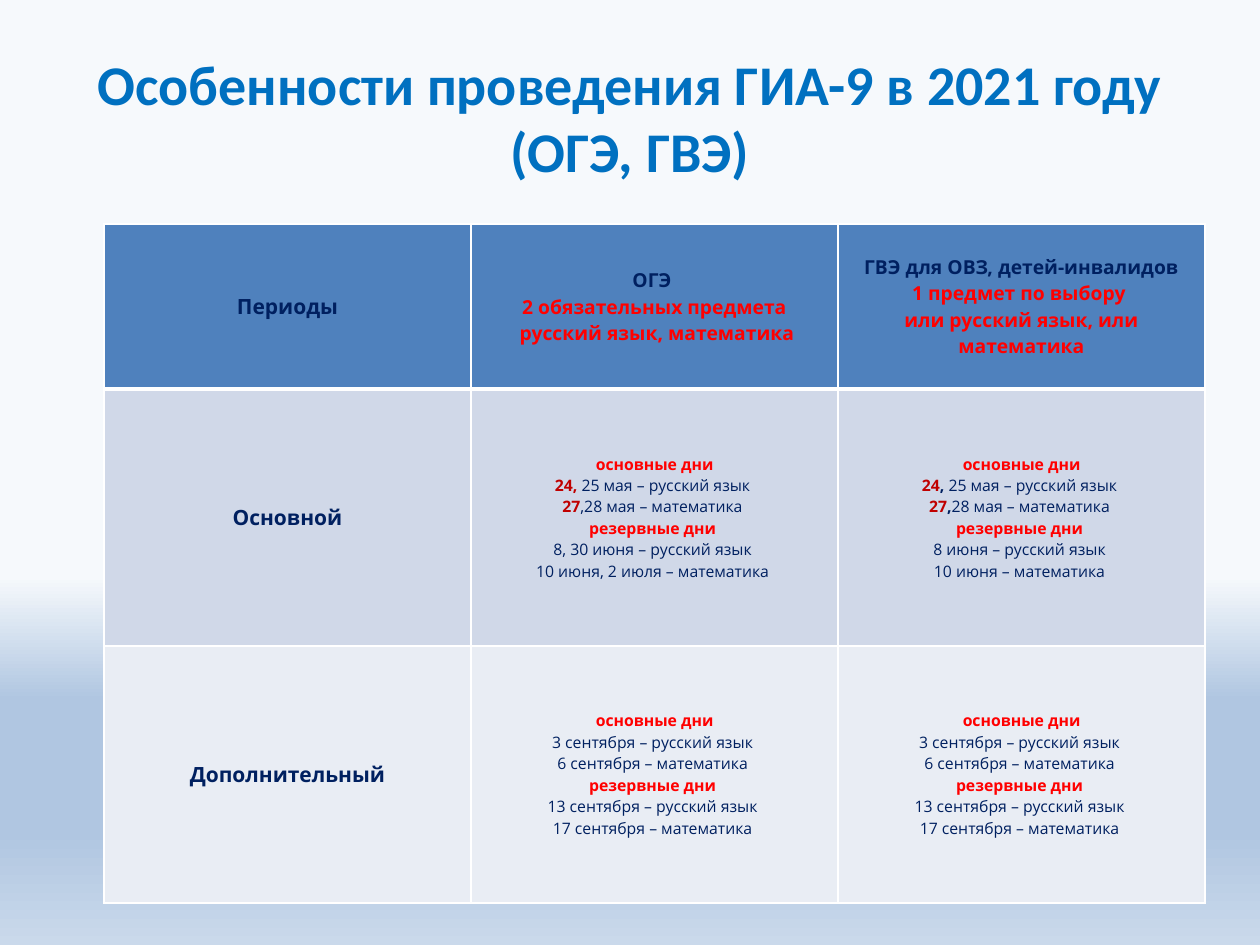
from lxml.etree import SubElement
from pptx import Presentation
from pptx.dml.color import RGBColor
from pptx.enum.text import MSO_ANCHOR, PP_ALIGN
from pptx.oxml.ns import qn
from pptx.util import Pt

PX = 914400 / 126
TITLE_BLUE = RGBColor(0x00, 0x70, 0xC0)
NAVY = RGBColor(0x00, 0x20, 0x60)
RED = RGBColor(0xFF, 0x00, 0x00)
DARK_RED = RGBColor(0xC0, 0x00, 0x00)
WHITE = RGBColor(0xFF, 0xFF, 0xFF)
HEADER_FILL = RGBColor(0x4F, 0x81, 0xBD)
MAIN_FILL = RGBColor(0xD0, 0xD8, 0xE8)
EXTRA_FILL = RGBColor(0xE9, 0xED, 0xF4)
SKY_PALE = RGBColor(0xF6, 0xF9, 0xFC)
SKY_BLUE = RGBColor(0xB0, 0xC6, 0xE1)
SKY_LIGHT = RGBColor(0xCA, 0xD9, 0xEB)


def px(length):
    return round(length * PX)


def add_border(cell, side, points):
    line = SubElement(cell._tc.get_or_add_tcPr(), qn(f"a:ln{side}"), w=str(Pt(points)))
    SubElement(SubElement(line, qn("a:solidFill")), qn("a:srgbClr"), val=str(WHITE))


prs = Presentation()
prs.slide_width, prs.slide_height = px(1260), px(945)
slide = prs.slides.add_slide(prs.slide_layouts[5])

sky = slide.background.fill
sky.gradient()
sky.gradient_angle = 270
stops = slide._element.find(".//" + qn("a:gsLst"))
for stop in list(stops):
    stops.remove(stop)
for percent, color in [(61, SKY_PALE), (74, SKY_BLUE), (88, SKY_BLUE), (100, SKY_LIGHT)]:
    stop = SubElement(stops, qn("a:gs"), pos=str(percent * 1000))
    SubElement(stop, qn("a:srgbClr"), val=str(color))

title = slide.shapes.title
title.left, title.top, title.width, title.height = px(63), px(38), px(1134), px(158)
title.text_frame.text = "Особенности проведения ГИА-9 в 2021 году (ОГЭ, ГВЭ)"
title.text_frame.vertical_anchor = MSO_ANCHOR.MIDDLE
heading = title.text_frame.paragraphs[0]
heading.alignment = PP_ALIGN.CENTER
heading_font = heading.runs[0].font
heading_font.name, heading_font.size, heading_font.bold = "Calibri", Pt(32), True
heading_font.color.rgb = TITLE_BLUE

main_days = [("основные дни", RED, True)]
reserve_days = [("резервные дни ", RED, True)]
september = [
    main_days,
    [("3 сентября – русский язык ", NAVY, False)],
    [("6 сентября – математика ", NAVY, False)],
    reserve_days,
    [("13 сентября – русский язык ", NAVY, False)],
    [("17 сентября – математика ", NAVY, False)],
]
oge_header = [
    [("ОГЭ ", NAVY, True)],
    [("2 обязательных предмета", RED, True)],
    [(" русский язык, математика", RED, True)],
]
gve_header = [
    [("ГВЭ для ОВЗ, детей-инвалидов", NAVY, True)],
    [("1 предмет по выбору ", RED, True)],
    [("или русский язык, или математика", RED, True)],
]
oge_main = [
    main_days,
    [("24, ", DARK_RED, True), ("25 мая – русский язык ", NAVY, False)],
    [("27", DARK_RED, True), (",28 мая – математика ", NAVY, False)],
    reserve_days,
    [("8, 30 июня – русский язык ", NAVY, False)],
    [("10 июня, 2 июля – математика ", NAVY, False)],
]
gve_main = [
    main_days,
    [("24", DARK_RED, True), (", ", NAVY, True), ("25 мая – русский язык ", NAVY, False)],
    [("27", DARK_RED, True), (",", NAVY, True), ("28 мая – математика ", NAVY, False)],
    reserve_days,
    [("8 июня – русский язык ", NAVY, False)],
    [("10 июня – математика ", NAVY, False)],
]
periods = [
    ("Периоды", oge_header, gve_header, HEADER_FILL, 11, 165, 3),
    ("Основной", oge_main, gve_main, MAIN_FILL, 9, 257, 1),
    ("Дополнительный", september, september, EXTRA_FILL, 9, 257, 1),
]

schedule = slide.shapes.add_table(3, 3, px(104), px(224), px(1101), px(679)).table
for column in schedule.columns:
    column.width = px(367)

for row_index, (period, oge, gve, fill, detail_size, height, bottom) in enumerate(periods):
    schedule.rows[row_index].height = px(height)
    top = periods[row_index - 1][-1] if row_index else 1
    for column_index, lines in enumerate([[[(period, NAVY, True)]], oge, gve]):
        cell = schedule.cell(row_index, column_index)
        cell.vertical_anchor = MSO_ANCHOR.MIDDLE
        cell.margin_left = cell.margin_right = px(11)
        cell.margin_top = cell.margin_bottom = px(5)
        for side, points in [("L", 1), ("R", 1), ("T", top), ("B", bottom)]:
            add_border(cell, side, points)
        cell.fill.solid()
        cell.fill.fore_color.rgb = fill
        cell.text_frame.text = "\n".join("" for _ in lines)
        for paragraph, parts in zip(cell.text_frame.paragraphs, lines):
            paragraph.alignment = PP_ALIGN.CENTER
            for text, color, bold in parts:
                run = paragraph.add_run()
                run.text = text
                run.font.name = "Open Sans"
                run.font.size = Pt(detail_size if column_index else 12)
                run.font.bold = bold
                run.font.color.rgb = color

prs.save("out.pptx")
